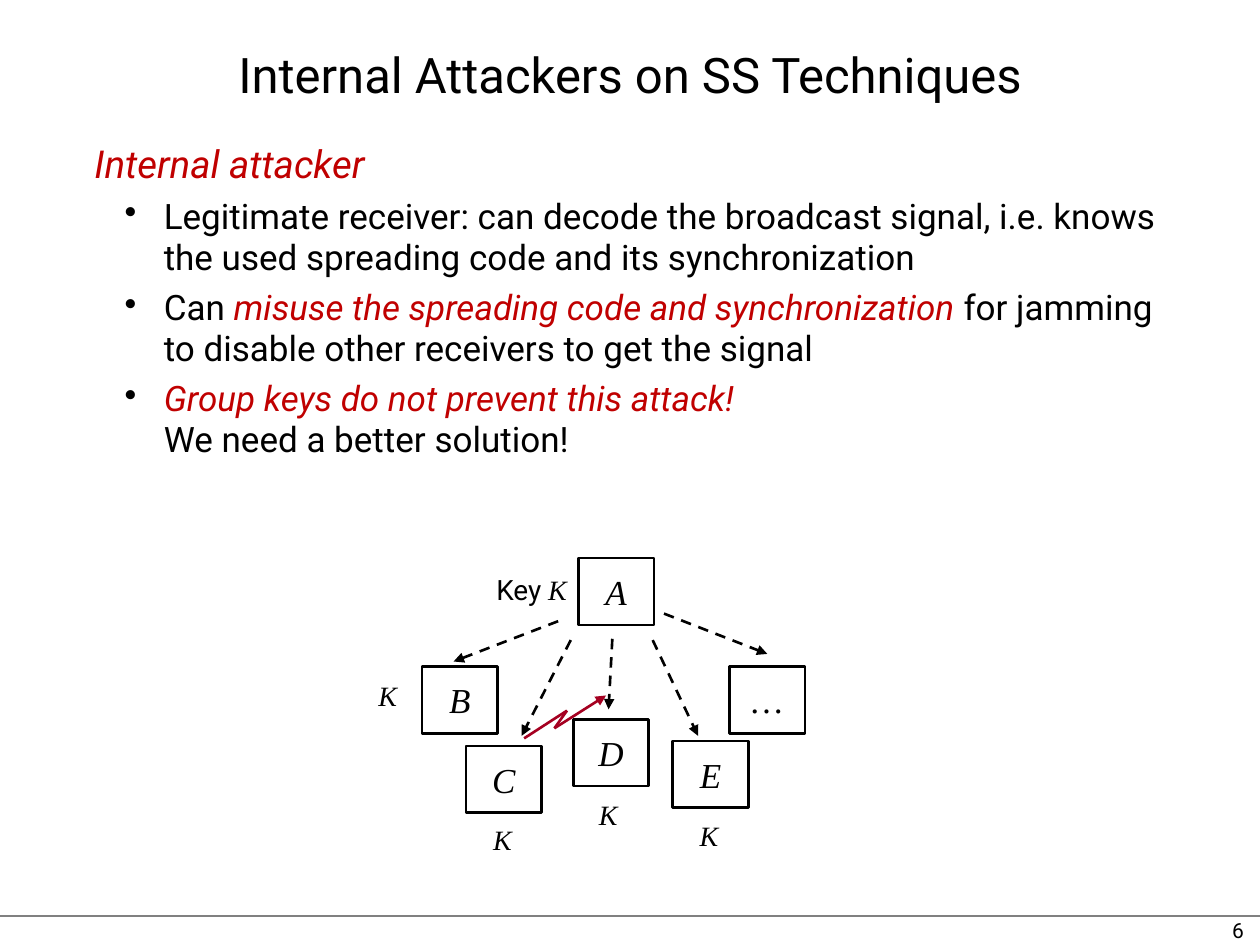
from dataclasses import dataclass

from lxml import etree
from pptx import Presentation
from pptx import util as u
from pptx.dml.color import RGBColor
from pptx.enum import dml, shapes, text
from pptx.oxml.ns import qn


@dataclass(frozen=True)
class Theme:
    black: RGBColor = RGBColor(0, 0, 0)
    white: RGBColor = RGBColor(255, 255, 255)
    rule: RGBColor = RGBColor(0x80, 0x80, 0x80)
    accent: RGBColor = RGBColor(0xC0, 0, 0)
    jamming: RGBColor = RGBColor(0xA5, 0, 0x21)
    sans: str = "Roboto"
    serif: str = "Times New Roman"
    title: int = 28
    heading: int = 22
    body: int = 20
    node: int = 20
    label: int = 16
    number: int = 12


theme = Theme()


def add_run(paragraph, words, size, font=theme.sans, color=theme.black, italic=False):
    run = paragraph.add_run()
    run.text = words
    run.font.size = u.Pt(size)
    run.font.name = font
    run.font.color.rgb = color
    run.font.italic = italic


def add_line(start, end, color=theme.black, width=1.5, dashed=False, arrow=False):
    line = slide.shapes.add_connector(
        shapes.MSO_CONNECTOR.STRAIGHT, *(u.Inches(value) for value in start + end))
    line.line.color.rgb = color
    line.line.width = u.Pt(width)
    if dashed:
        line.line.dash_style = dml.MSO_LINE.DASH
    if arrow:
        etree.SubElement(line.line._get_or_add_ln(), qn("a:tailEnd"), type="triangle")
    etree.SubElement(line._element.spPr, qn("a:effectLst"))


presentation = Presentation()
presentation.slide_width = u.Inches(10)
presentation.slide_height = u.Inches(7.5)
slide = presentation.slides.add_slide(presentation.slide_layouts[5])

# Footer rule and slide number
add_line((0, 7.27), (10, 7.27), theme.rule, 0.75)
number = slide.shapes.add_textbox(
    u.Inches(7.89), u.Inches(7.24), u.Inches(2.08), u.Inches(0.26))
number.text_frame.word_wrap = True
paragraph = number.text_frame.paragraphs[0]
paragraph.alignment = text.PP_ALIGN.RIGHT
paragraph.line_spacing = 0.98
add_run(paragraph, "6", theme.number)

# Title
title = slide.shapes.title
title.left, title.top = u.Inches(0), u.Inches(0.2)
title.width, title.height = u.Inches(10), u.Inches(0.82)
frame = title.text_frame
frame.margin_left = frame.margin_right = frame.margin_top = frame.margin_bottom = 0
frame.vertical_anchor = text.MSO_ANCHOR.MIDDLE
paragraph = frame.paragraphs[0]
paragraph.alignment = text.PP_ALIGN.CENTER
paragraph.line_spacing = 0.97
add_run(paragraph, "Internal Attackers on SS Techniques", theme.title)

# Heading and bullets: each bullet is a list of (words, emphasised) pieces
bullets = [
    [("Legitimate receiver: can decode the broadcast signal, i.e. knows "
      "the used spreading code and its synchronization", False)],
    [("Can ", False),
     ("misuse the spreading code and synchronization ", True),
     ("for jamming to disable other receivers to get the signal", False)],
    [("Group keys do not prevent this attack!", True),
     ("\n", False),
     ("We need a better solution!", False)],
]
body = slide.shapes.add_textbox(
    u.Inches(0.75), u.Inches(1.12), u.Inches(8.5), u.Inches(3))
frame = body.text_frame
frame.word_wrap = True
frame.margin_left = frame.margin_right = frame.margin_bottom = 0
frame.margin_top = u.Inches(0.01)
paragraph = frame.paragraphs[0]
paragraph.line_spacing = 0.97
add_run(paragraph, "Internal attacker", theme.heading, color=theme.accent, italic=True)

for pieces in bullets:
    paragraph = frame.add_paragraph()
    paragraph.level = 1
    paragraph.line_spacing = 0.97
    paragraph.space_before = u.Pt(5.5)
    properties = paragraph._p.get_or_add_pPr()
    properties.set("marL", str(u.Inches(0.55)))
    properties.set("indent", str(u.Inches(-0.31)))
    bullet_color = etree.SubElement(properties, qn("a:buClr"))
    etree.SubElement(bullet_color, qn("a:srgbClr"), val=str(theme.black))
    etree.SubElement(properties, qn("a:buChar"), char="•")
    for words, emphasised in pieces:
        if words == "\n":
            paragraph.add_line_break()
        else:
            add_run(paragraph, words, theme.body, italic=emphasised,
                    color=theme.accent if emphasised else theme.black)

# Diagram boxes: nodes are outlined, key labels are not
node_size = (0.6, 0.53)
center, left, right = text.PP_ALIGN.CENTER, text.PP_ALIGN.LEFT, text.PP_ALIGN.RIGHT
boxes = [
    ("A", (4.59, 4.43), node_size, center),
    ("…", (5.79, 5.29), node_size, center),
    ("B", (3.35, 5.29), node_size, center),
    ("D", (4.55, 5.71), node_size, center),
    ("C", (3.7, 5.92), node_size, center),
    ("E", (5.34, 5.88), node_size, center),
    ("Key K", (3.84, 4.45), (0.69, 0.45), left),
    ("K", (2.56, 5.29), (0.69, 0.45), right),
    ("K", (3.47, 6.49), (0.69, 0.34), right),
    ("K", (4.48, 6.29), (0.52, 0.34), right),
    ("K", (5.28, 6.46), (0.52, 0.34), right),
]
for name, position, size, alignment in boxes:
    shape = slide.shapes.add_shape(
        shapes.MSO_SHAPE.RECTANGLE, *(u.Inches(value) for value in position + size))
    shape.shadow.inherit = False
    shape.fill.solid()
    shape.fill.fore_color.rgb = theme.white
    is_node = alignment == center
    if is_node:
        shape.line.color.rgb = theme.black
        shape.line.width = u.Pt(1.5)
    else:
        shape.line.fill.background()
    shape.text_frame.word_wrap = False
    shape.text_frame.vertical_anchor = text.MSO_ANCHOR.MIDDLE
    paragraph = shape.text_frame.paragraphs[0]
    paragraph.alignment = alignment
    if name == "Key K":
        add_run(paragraph, "Key", theme.label)
        name = " K"
    add_run(paragraph, name, theme.node if is_node else theme.label,
            theme.serif, italic=True)

# Broadcast arrows from A to the receivers
broadcasts = [
    ((4.43, 4.93), (3.6, 5.25)),
    ((5.27, 4.87), (6.09, 5.19)),
    ((4.86, 5.07), (4.83, 5.63)),
    ((5.18, 5.08), (5.54, 5.84)),
    ((4.53, 5.08), (4.14, 5.84)),
]
for start, end in broadcasts:
    add_line(start, end, dashed=True, arrow=True)

# Jamming bolt from C to D
bolt = [(4.16, 5.86), (4.5, 5.64), (4.4, 5.78), (4.81, 5.52)]
for start, end in zip(bolt, bolt[1:]):
    add_line(start, end, theme.jamming, arrow=end == bolt[-1])

presentation.save("out.pptx")
